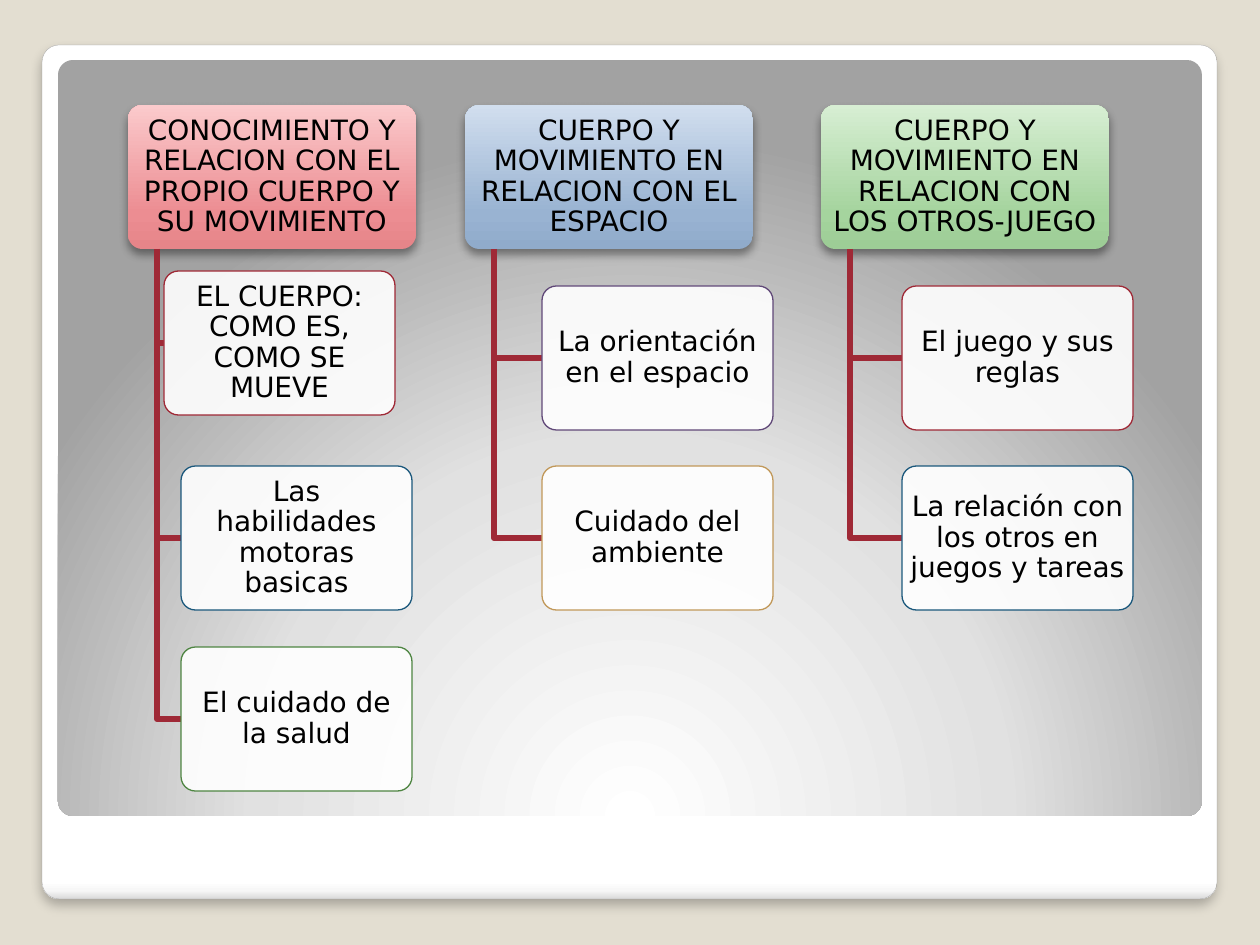
from lxml.etree import SubElement
from pptx import Presentation
from pptx.dml.color import RGBColor
from pptx.enum.shapes import MSO_SHAPE
from pptx.enum.text import MSO_ANCHOR, PP_ALIGN
from pptx.oxml import parse_xml
from pptx.oxml.ns import nsdecls, qn
from pptx.util import Pt

PX = 914400 / 126

THEME = {
    "font": "DejaVu Sans", "size": 16, "text": "000000",
    "background": "E3DED1", "frame_line": "A4A4A4", "card": "FFFFFF",
    "red": "9F2936", "blue": "1B587C", "green": "4E8542",
    "purple": "604878", "gold": "C19859",
    "frame": [(0, "FFFFFF"), (98, "FFFFFF"), (99, "F7F7F7"), (100, "DADADA")],
    "panel": [(0, "FFFFFF"), (55, "E1E1E1"), (100, "A2A2A2")],
    "red_head": [(0, "E68589"), (25, "EC8D92"), (100, "FBCACC")],
    "blue_head": [(0, "90ABCB"), (25, "99B3D2"), (100, "D1DEEE")],
    "green_head": [(0, "9DCD96"), (25, "A5D49E"), (100, "D7EED3")],
}

# Each branch: heading, gradient, left edge, then topics (text, outline, left, top)
BRANCHES = [
    ("CONOCIMIENTO Y RELACION CON EL PROPIO CUERPO Y SU MOVIMIENTO", "red_head", 128, [
        ("EL CUERPO: COMO ES, COMO SE MUEVE", "red", 164, 271),
        ("Las habilidades motoras basicas", "blue", 181, 466),
        ("El cuidado de la salud", "green", 181, 647),
    ]),
    ("CUERPO Y MOVIMIENTO EN RELACION CON EL ESPACIO", "blue_head", 465, [
        ("La orientación en el espacio", "purple", 542, 286),
        ("Cuidado del ambiente", "gold", 542, 466),
    ]),
    ("CUERPO Y MOVIMIENTO EN RELACION CON LOS OTROS-JUEGO", "green_head", 821, [
        ("El juego y sus reglas", "red", 902, 286),
        ("La relación con los otros en juegos y tareas", "blue", 902, 466),
    ]),
]

HEAD_TOP, HEAD_WIDTH, TOPIC_WIDTH, BOX_HEIGHT = 105, 288, 231, 144
TRUNK_INDENT = 29
LINEAR = '<a:lin ang="{}" scaled="0"/>'
RADIAL = ('<a:path path="circle"><a:fillToRect l="50000" t="175000" '
          'r="50000" b="-75000"/></a:path>')


def px(length):
    return round(length * PX)


def color(name):
    return RGBColor.from_string(THEME[name])


def add_round_box(slide, left, top, width, height, radius):
    box = slide.shapes.add_shape(MSO_SHAPE.ROUNDED_RECTANGLE,
                                 px(left), px(top), px(width), px(height))
    box.adjustments[0] = radius
    box.shadow.inherit = False
    box.line.fill.background()
    return box


def set_gradient(box, name, direction):
    stops = "".join(f'<a:gs pos="{place * 1000}"><a:srgbClr val="{rgb}"/></a:gs>'
                    for place, rgb in THEME[name])
    gradient = parse_xml(f'<a:gradFill {nsdecls("a")} rotWithShape="1">'
                         f'<a:gsLst>{stops}</a:gsLst>{direction}</a:gradFill>')
    box._element.spPr.find(qn("a:prstGeom")).addnext(gradient)


def set_shadow(box, opacity, blur, distance):
    """Cast a black shadow straight down."""
    effects = box._element.spPr.find(qn("a:effectLst"))
    shadow = SubElement(effects, qn("a:outerShdw"), blurRad=str(Pt(blur)),
                        dist=str(Pt(distance)), dir="5400000", rotWithShape="0")
    black = SubElement(shadow, qn("a:srgbClr"), val="000000")
    SubElement(black, qn("a:alpha"), val=str(opacity * 1000))


def write_label(box, label):
    frame = box.text_frame
    frame.word_wrap = True
    frame.vertical_anchor = MSO_ANCHOR.MIDDLE
    frame.margin_left = frame.margin_right = px(4)
    frame.margin_top = frame.margin_bottom = px(3)
    paragraph = frame.paragraphs[0]
    paragraph.text = label
    paragraph.alignment = PP_ALIGN.CENTER
    paragraph.line_spacing = 0.9
    paragraph.font.name = THEME["font"]
    paragraph.font.size = Pt(THEME["size"])
    paragraph.font.color.rgb = color("text")


def add_elbow(slide, trunk, top, topic_left, topic_middle):
    builder = slide.shapes.build_freeform(px(trunk), px(top))
    builder.add_line_segments([(px(trunk), px(topic_middle)),
                               (px(topic_left), px(topic_middle))], close=False)
    elbow = builder.convert_to_shape()
    elbow.shadow.inherit = False
    elbow.fill.background()
    elbow.line.color.rgb = color("red")
    elbow.line.width = Pt(3.35)


def add_heading(slide, label, gradient, left):
    box = add_round_box(slide, left, HEAD_TOP, HEAD_WIDTH, BOX_HEIGHT, 0.1)
    set_gradient(box, gradient, LINEAR.format(16200000))
    set_shadow(box, 40, 5.2, 3)
    write_label(box, label)


def add_topic(slide, label, outline, left, top):
    box = add_round_box(slide, left, top, TOPIC_WIDTH, BOX_HEIGHT, 0.1)
    box.fill.solid()
    box.fill.fore_color.rgb = color("card")
    fill_color = box._element.spPr.find(qn("a:solidFill")).find(qn("a:srgbClr"))
    SubElement(fill_color, qn("a:alpha"), val="90000")
    box.line.color.rgb = color(outline)
    box.line.width = Pt(0.75)
    write_label(box, label)


def add_backdrop(slide):
    slide.background.fill.solid()
    slide.background.fill.fore_color.rgb = color("background")
    frame = add_round_box(slide, 42, 45, 1175, 854, 0.02)
    set_gradient(frame, "frame", LINEAR.format(5400000))
    frame.line.color.rgb = color("frame_line")
    frame.line.width = Pt(0.16)
    set_shadow(frame, 25, 6, 4)
    panel = add_round_box(slide, 58, 60, 1144, 756, 0.02)
    set_gradient(panel, "panel", RADIAL)


def main():
    deck = Presentation()
    deck.slide_width, deck.slide_height = px(1260), px(945)
    slide = deck.slides.add_slide(deck.slide_layouts[6])
    add_backdrop(slide)
    for heading, gradient, left, topics in BRANCHES:
        add_heading(slide, heading, gradient, left)
        for label, outline, topic_left, top in topics:
            add_elbow(slide, left + TRUNK_INDENT, HEAD_TOP + BOX_HEIGHT,
                      topic_left, top + BOX_HEIGHT / 2)
            add_topic(slide, label, outline, topic_left, top)
    deck.save("out.pptx")


if __name__ == "__main__":
    main()
